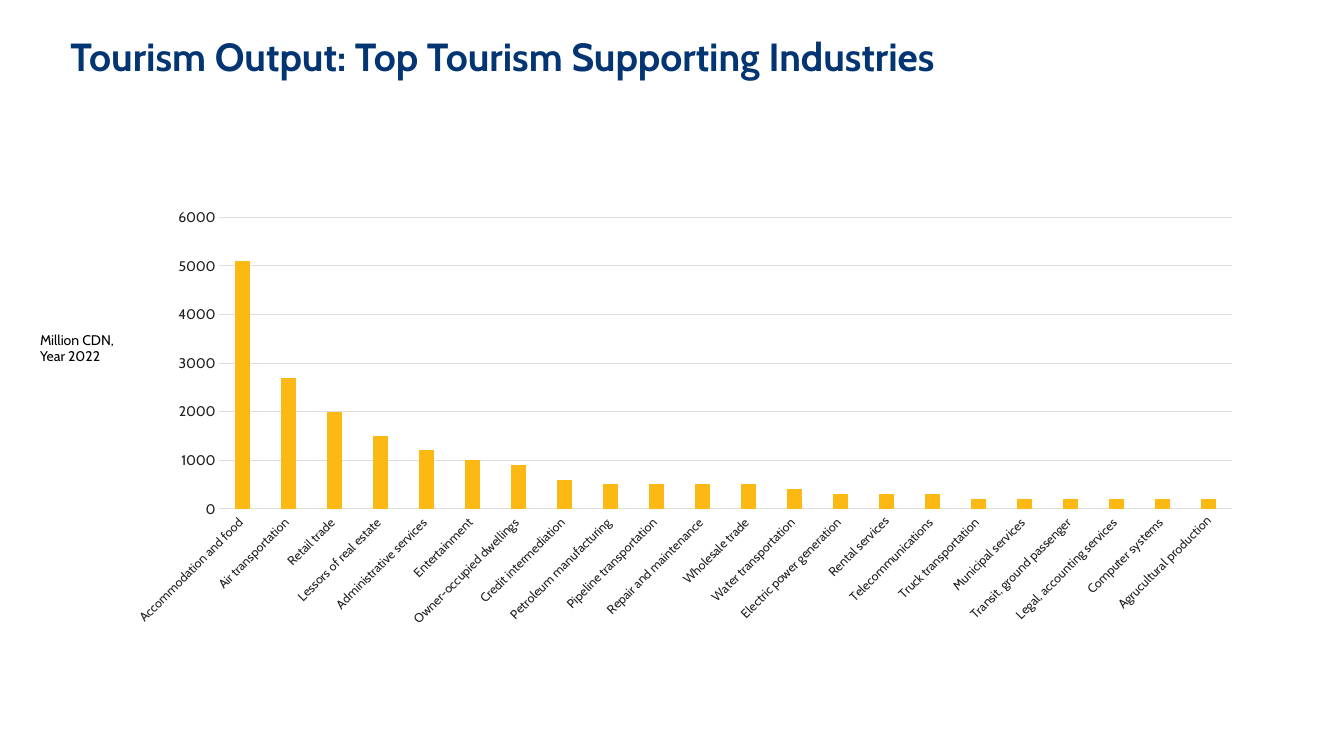
from dataclasses import dataclass

import pptx
import pptx.chart.data
import pptx.dml.color
import pptx.enum.chart
import pptx.enum.text
import pptx.oxml
import pptx.oxml.ns
import pptx.util
from pptx.util import Cm


@dataclass(frozen=True)
class Theme:
    face: str = "Cabin"
    navy: str = "033573"
    gold: str = "FDB913"
    ink: str = "231F20"
    black: str = "000000"
    grid: str = "E0DCDD"
    head: float = 28
    body: float = 10
    small: float = 9
    rule: float = 0.75


THEME = Theme()

SALES = {
    "Accommodation and food ": 5100,
    "Air transportation ": 2700,
    "Retail trade ": 2000,
    "Lessors of real estate ": 1500,
    "Administrative services ": 1200,
    "Entertainment ": 1000,
    "Owner-occupied dwellings ": 900,
    "Credit intermediation ": 600,
    "Petroleum manufacturing ": 500,
    "Pipeline transportation ": 500,
    "Repair and maintenance ": 500,
    "Wholesale trade ": 500,
    "Water transportation ": 400,
    "Electric power generation ": 300,
    "Rental services": 300,
    "Telecommunications ": 300,
    "Truck transportation ": 200,
    "Municipal services ": 200,
    "Transit, ground passenger ": 200,
    "Legal, accounting services ": 200,
    "Computer systems ": 200,
    "Agrucultural production": 200,
}


def paint(code):
    return pptx.dml.color.RGBColor.from_string(code)


def style(font, size, tone, bold=False):
    font.name = THEME.face
    font.size = pptx.util.Pt(size)
    font.bold = bold
    font.color.rgb = paint(tone)


def rule(line):
    line.color.rgb = paint(THEME.grid)
    line.width = pptx.util.Pt(THEME.rule)


def add_title(slide, text):
    title = slide.shapes.title
    title.left, title.top = Cm(1.52), Cm(0.82)
    title.width, title.height = Cm(30.84), Cm(1.65)
    frame = title.text_frame
    frame.text = text
    frame.word_wrap = True
    frame.auto_size = pptx.enum.text.MSO_AUTO_SIZE.NONE
    frame.vertical_anchor = pptx.enum.text.MSO_ANCHOR.TOP
    line = frame.paragraphs[0]
    line.alignment = pptx.enum.text.PP_ALIGN.LEFT
    line.line_spacing = 0.9
    style(line.runs[0].font, THEME.head, THEME.navy, True)


def add_label(slide, text):
    box = slide.shapes.add_textbox(Cm(0.76), Cm(8.22), Cm(4.32), Cm(1.12))
    frame = box.text_frame
    frame.text = text
    frame.word_wrap = True
    frame.auto_size = pptx.enum.text.MSO_AUTO_SIZE.SHAPE_TO_FIT_TEXT
    for line in frame.paragraphs:
        style(line.runs[0].font, THEME.body, THEME.black)


def place_plot(chart, **spots):
    area = chart.element.find(".//" + pptx.oxml.ns.qn("c:plotArea"))
    for old in area.findall(pptx.oxml.ns.qn("c:layout")):
        area.remove(old)
    tags = "".join(f'<c:{key} val="{spot}"/>' for key, spot in spots.items())
    area.insert(0, pptx.oxml.parse_xml(
        f'<c:layout {pptx.oxml.ns.nsdecls("c")}><c:manualLayout>'
        '<c:layoutTarget val="inner"/><c:xMode val="edge"/>'
        f'<c:yMode val="edge"/>{tags}</c:manualLayout></c:layout>'))


def style_axes(chart):
    names, sums = chart.category_axis, chart.value_axis
    for axis, size in ((names, THEME.small), (sums, THEME.body)):
        axis.major_tick_mark = pptx.enum.chart.XL_TICK_MARK.NONE
        axis.minor_tick_mark = pptx.enum.chart.XL_TICK_MARK.NONE
        style(axis.tick_labels.font, size, THEME.ink)
    rule(names.format.line)
    body = names._element.find(".//" + pptx.oxml.ns.qn("a:bodyPr"))
    body.set("rot", "-2700000")
    body.set("vert", "horz")
    sums.minimum_scale, sums.maximum_scale, sums.major_unit = 0, 6000, 1000
    sums.tick_labels.number_format = "0"
    sums.tick_labels.number_format_is_linked = False
    sums.format.line.fill.background()
    sums.has_major_gridlines = True
    rule(sums.major_gridlines.format.line)


def add_bars(slide, sales):
    data = pptx.chart.data.CategoryChartData(number_format="0")
    data.categories = list(sales)
    data.add_series("Series 1", list(sales.values()))
    chart = slide.shapes.add_chart(
        pptx.enum.chart.XL_CHART_TYPE.COLUMN_CLUSTERED,
        Cm(2.97), Cm(3.65), Cm(29.39), Cm(14.07), data).chart
    chart.has_title = False
    chart.has_legend = False
    style(chart.font, THEME.body, THEME.ink)
    plot = chart.plots[0]
    plot.gap_width = 219
    plot.vary_by_categories = False
    fill = plot.series[0].format.fill
    fill.solid()
    fill.fore_color.rgb = paint(THEME.gold)
    style_axes(chart)
    place_plot(chart, x=0.087, y=0.13, w=0.868, h=0.522)


def main():
    deck = pptx.Presentation()
    deck.slide_width, deck.slide_height = Cm(33.87), Cm(19.05)
    slide = deck.slides.add_slide(deck.slide_layouts[5])
    add_title(slide, "Tourism Output: Top Tourism Supporting Industries")
    add_bars(slide, SALES)
    add_label(slide, "Million CDN,\nYear 2022")
    deck.save("out.pptx")


if __name__ == "__main__":
    main()
